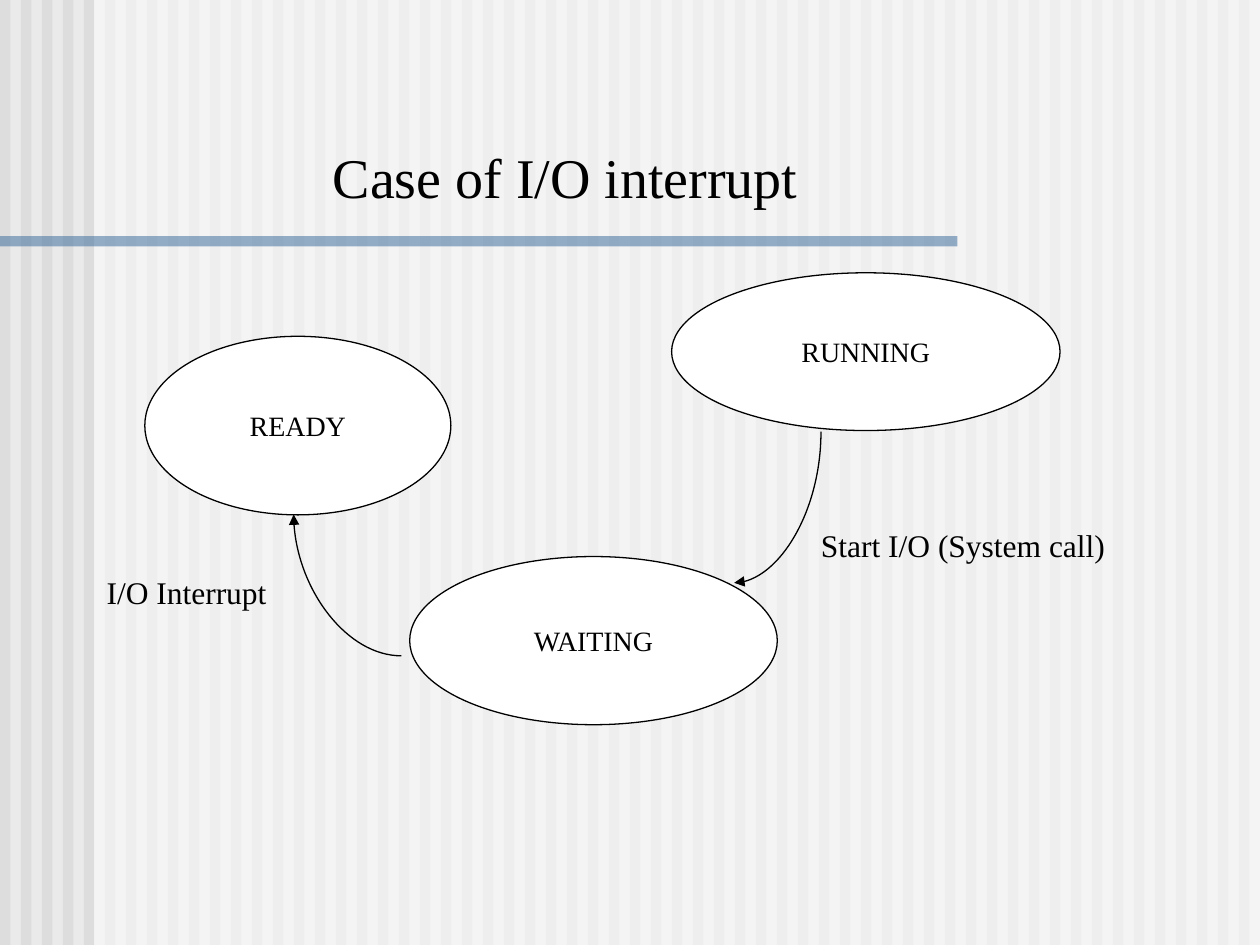
"""Build the slide that shows process states around an I/O interrupt."""
from dataclasses import dataclass

from lxml.etree import SubElement as Sub
from pptx import Presentation as Deck
from pptx.dml.color import RGBColor as Rgb
from pptx.enum.shapes import MSO_CONNECTOR as Link, MSO_SHAPE as Form
from pptx.enum.text import MSO_ANCHOR as Anchor, PP_ALIGN as Align
from pptx.oxml.ns import qn
from pptx.shapes.autoshape import Shape
from pptx.slide import Slide
from pptx.text.text import TextFrame as Frame
from pptx.util import Cm, Pt


@dataclass(frozen=True)
class Theme:
    back: Rgb = Rgb(0xEA, 0xEA, 0xEA)
    stripe: Rgb = Rgb(0xDD, 0xDD, 0xDD)
    white: Rgb = Rgb(0xFF, 0xFF, 0xFF)
    rule: Rgb = Rgb(0x33, 0x66, 0x99)
    ink: Rgb = Rgb(0, 0, 0)
    font: str = "Times New Roman"
    title: int = 32
    label: int = 18
    state: int = 16
    line: float = 0.75


@dataclass(frozen=True)
class Box:
    left: float
    top: float
    width: float
    height: float

    def place(self) -> tuple[Cm, Cm, Cm, Cm]:
        return Cm(self.left), Cm(self.top), Cm(self.width), Cm(self.height)


@dataclass(frozen=True)
class State:
    name: str
    box: Box


@dataclass(frozen=True)
class Arc:
    box: Box
    turn: int


@dataclass(frozen=True)
class Note:
    text: str
    box: Box
    size: int
    align: Align = Align.LEFT


THEME = Theme()
WIDE, HIGH = 25.4, 19.05
COUNT = 60
PITCH = WIDE / COUNT

STATES = (
    State("READY", Box(2.92, 6.78, 6.17, 3.6)),
    State("RUNNING", Box(13.54, 5.5, 7.83, 3.18)),
    State("WAITING", Box(8.26, 11.22, 7.41, 3.39)),
)
ARCS = (
    Arc(Box(5.92, 10.37, 2.17, 2.85), 180),
    Arc(Box(14.15, 9.35, 3.05, 1.75), 90),
)
NOTES = (
    Note("I/O Interrupt", Box(1.9, 11.43, 3.81, 1.02), THEME.label),
    Note("Start I/O (System call)", Box(16.3, 10.48, 6.78, 1.02), THEME.label),
    Note("Case of I/O interrupt", Box(6.22, 2.75, 10.36, 1.6), THEME.title, Align.CENTER),
)


def write(frame: Frame, text: str, size: int, align: Align) -> None:
    para = frame.paragraphs[0]
    para.alignment = align
    run = para.add_run()
    run.text = text
    run.font.name = THEME.font
    run.font.size = Pt(size)
    run.font.color.rgb = THEME.ink


def add_form(slide: Slide, form: Form, box: Box, fill: Rgb) -> Shape:
    shape = slide.shapes.add_shape(form, *box.place())
    shape.shadow.inherit = False
    shape.fill.solid()
    shape.fill.fore_color.rgb = fill
    return shape


def add_band(slide: Slide, box: Box, fill: Rgb, alpha: int = 100) -> None:
    band = add_form(slide, Form.RECTANGLE, box, fill)
    band.line.fill.background()
    if alpha < 100:
        tint = band.fill._xPr.find(qn("a:solidFill"))[0]
        Sub(tint, qn("a:alpha"), val=str(alpha * 1000))


def add_state(slide: Slide, state: State) -> None:
    oval = add_form(slide, Form.OVAL, state.box, THEME.white)
    oval.line.color.rgb = THEME.ink
    oval.line.width = Pt(THEME.line)
    frame = oval.text_frame
    frame.word_wrap = False
    frame.vertical_anchor = Anchor.MIDDLE
    write(frame, state.name, THEME.state, Align.CENTER)


def add_arc(slide: Slide, arc: Arc) -> None:
    left, top, width, height = arc.box.place()
    curve = slide.shapes.add_connector(Link.CURVE, left, top, left + width, top + height)
    curve.line.color.rgb = THEME.ink
    curve.line.width = Pt(THEME.line)
    props = curve._element.spPr
    props.find(qn("a:xfrm")).set("rot", str(arc.turn * 60000))
    props.find(qn("a:prstGeom")).set("prst", "curvedConnector2")
    Sub(props.find(qn("a:ln")), qn("a:tailEnd"), type="triangle")
    Sub(props, qn("a:effectLst"))


def add_note(slide: Slide, note: Note) -> None:
    frame = slide.shapes.add_textbox(*note.box.place()).text_frame
    frame.word_wrap = True
    write(frame, note.text, note.size, note.align)


def main() -> None:
    deck = Deck()
    deck.slide_width, deck.slide_height = Cm(WIDE), Cm(HIGH)
    slide = deck.slides.add_slide(deck.slide_layouts[6])
    slide.background.fill.solid()
    slide.background.fill.fore_color.rgb = THEME.back
    for step in range(COUNT):
        add_band(slide, Box(step * PITCH, 0, PITCH / 2, HIGH), THEME.stripe)
    add_band(slide, Box(1.9, 0, WIDE - 1.9, HIGH), THEME.white, 50)
    add_band(slide, Box(0, 4.76, 19.3, 0.21), THEME.rule, 50)
    for state in STATES:
        add_state(slide, state)
    for arc in ARCS:
        add_arc(slide, arc)
    for note in NOTES:
        add_note(slide, note)
    deck.save("out.pptx")


if __name__ == "__main__":
    main()
